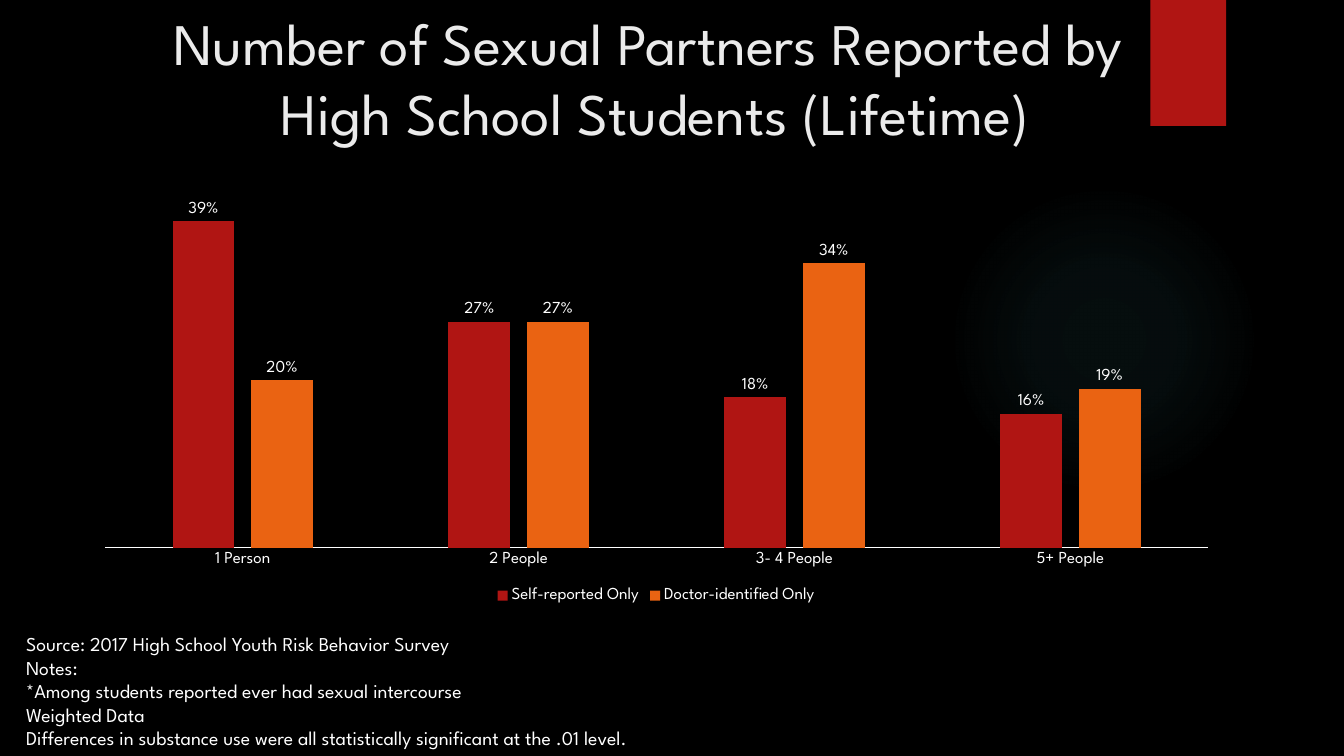
"""Build a slide charting lifetime partners reported by high school students."""
import pptx
import pptx.chart.data
import pptx.dml.color
import pptx.enum.chart
import pptx.enum.shapes
import pptx.enum.text
import pptx.oxml
import pptx.oxml.ns
import pptx.util

Pt = pptx.util.Pt
COLORS = {
    "background": "000000",
    "title": "EBEBEB",
    "text": "FFFFFF",
    "self_reported": "B01513",
    "doctor_identified": "EA6312",
    "glow": "50B9C1",
}


class SurveySlide:
    def __init__(self, presentation, font_name):
        self.font_name = font_name
        self.slide = presentation.slides.add_slide(presentation.slide_layouts[6])
        self.paint(self.slide.background.fill, "background")

    def paint(self, fill, color):
        fill.solid()
        fill.fore_color.rgb = pptx.dml.color.RGBColor.from_string(COLORS[color])

    def style(self, font, size, color="text"):
        font.name = self.font_name
        font.size = Pt(size)
        font.bold = False
        self.paint(font.fill, color)

    def add_shape(self, kind, left, top, width, height):
        shape = self.slide.shapes.add_shape(
            kind, Pt(left), Pt(top), Pt(width), Pt(height))
        shape.shadow.inherit = False
        shape.line.fill.background()
        return shape

    def add_ribbon(self, left, top, width, height, color):
        ribbon = self.add_shape(
            pptx.enum.shapes.MSO_SHAPE.RECTANGLE, left, top, width, height)
        self.paint(ribbon.fill, color)

    def add_glow(self, left, top, size, color, stops):
        glow = self.add_shape(
            pptx.enum.shapes.MSO_SHAPE.OVAL, left, top, size, size)
        gradient_stops = "".join(
            f'<a:gs pos="{position * 1000}"><a:srgbClr val="{COLORS[color]}">'
            f'<a:alpha val="{opacity * 1000}"/></a:srgbClr></a:gs>'
            for position, opacity in stops)
        gradient = pptx.oxml.parse_xml(
            f'<a:gradFill {pptx.oxml.ns.nsdecls("a")}>'
            f'<a:gsLst>{gradient_stops}</a:gsLst><a:path path="circle">'
            '<a:fillToRect l="50000" t="50000" r="50000" b="50000"/>'
            '</a:path></a:gradFill>')
        glow._element.spPr.find(pptx.oxml.ns.qn("a:prstGeom")).addnext(gradient)

    def add_text(self, left, top, width, height, paragraphs, size, color="text",
                 align=pptx.enum.text.PP_ALIGN.LEFT,
                 anchor=pptx.enum.text.MSO_ANCHOR.TOP):
        frame = self.slide.shapes.add_textbox(
            Pt(left), Pt(top), Pt(width), Pt(height)).text_frame
        frame.word_wrap = True
        frame.vertical_anchor = anchor
        for index, lines in enumerate(paragraphs):
            paragraph = frame.add_paragraph() if index else frame.paragraphs[0]
            paragraph.alignment = align
            for line_index, line in enumerate(lines):
                if line_index:
                    paragraph.add_line_break()
                run = paragraph.add_run()
                run.text = line
                self.style(run.font, size, color)

    def add_column_chart(self, left, top, width, height, categories, series, maximum):
        chart_data = pptx.chart.data.CategoryChartData(number_format="0%")
        chart_data.categories = categories
        for name, values, _ in series:
            chart_data.add_series(name, values)
        chart = self.slide.shapes.add_chart(
            pptx.enum.chart.XL_CHART_TYPE.COLUMN_CLUSTERED,
            Pt(left), Pt(top), Pt(width), Pt(height), chart_data).chart
        self.style(chart.font, 10)
        chart.has_title = False
        chart.has_legend = True
        chart.legend.position = pptx.enum.chart.XL_LEGEND_POSITION.BOTTOM
        chart.legend.include_in_layout = False
        self.style(chart.legend.font, 12)

        category_axis = chart.category_axis
        category_axis.major_tick_mark = pptx.enum.chart.XL_TICK_MARK.NONE
        self.style(category_axis.tick_labels.font, 12)
        self.paint(category_axis.format.line.fill, "text")
        category_axis.format.line.width = Pt(0.75)
        value_axis = chart.value_axis
        value_axis.visible = False
        value_axis.has_major_gridlines = False
        value_axis.minimum_scale = 0
        value_axis.maximum_scale = maximum

        plot = chart.plots[0]
        plot.gap_width = 219
        plot.overlap = -27
        plot.vary_by_categories = False
        for columns, (_, _, color) in zip(plot.series, series):
            self.paint(columns.format.fill, color)
            labels = columns.data_labels
            labels.show_value = True
            labels.number_format = "0%"
            labels.number_format_is_linked = False
            labels.position = pptx.enum.chart.XL_LABEL_POSITION.OUTSIDE_END
            self.style(labels.font, 12)


def main():
    presentation = pptx.Presentation()
    presentation.slide_width = Pt(960)
    presentation.slide_height = Pt(540)
    survey = SurveySlide(presentation, "League Spartan")
    survey.add_glow(677.5, 131.75, 221.75, "glow", [(0, 7), (36, 6), (69, 0)])
    survey.add_ribbon(821.75, 0, 54, 90, "self_reported")
    survey.add_text(
        8.5, 0, 919.5, 110,
        [["Number of Sexual Partners Reported by ",
          "High School Students (Lifetime)"]],
        42, "title", pptx.enum.text.PP_ALIGN.CENTER,
        pptx.enum.text.MSO_ANCHOR.MIDDLE)
    survey.add_column_chart(
        58.5, 116, 821, 318,
        ["1 Person", "2 People", "3- 4 People", "5+ People"],
        [("Self-reported Only", (0.39, 0.27, 0.18, 0.16), "self_reported"),
         ("Doctor-identified Only", (0.2, 0.27, 0.34, 0.19), "doctor_identified")],
        0.45)
    survey.add_text(
        11.5, 448, 948.5, 92,
        [["Source: 2017 High School Youth Risk Behavior Survey"],
         ["Notes:"],
         ["*Among students reported ever had sexual intercourse"],
         ["Weighted Data"],
         ["Differences in substance use were all statistically significant "
          "at the .01 level."]],
        14)
    presentation.save("out.pptx")


if __name__ == "__main__":
    main()
